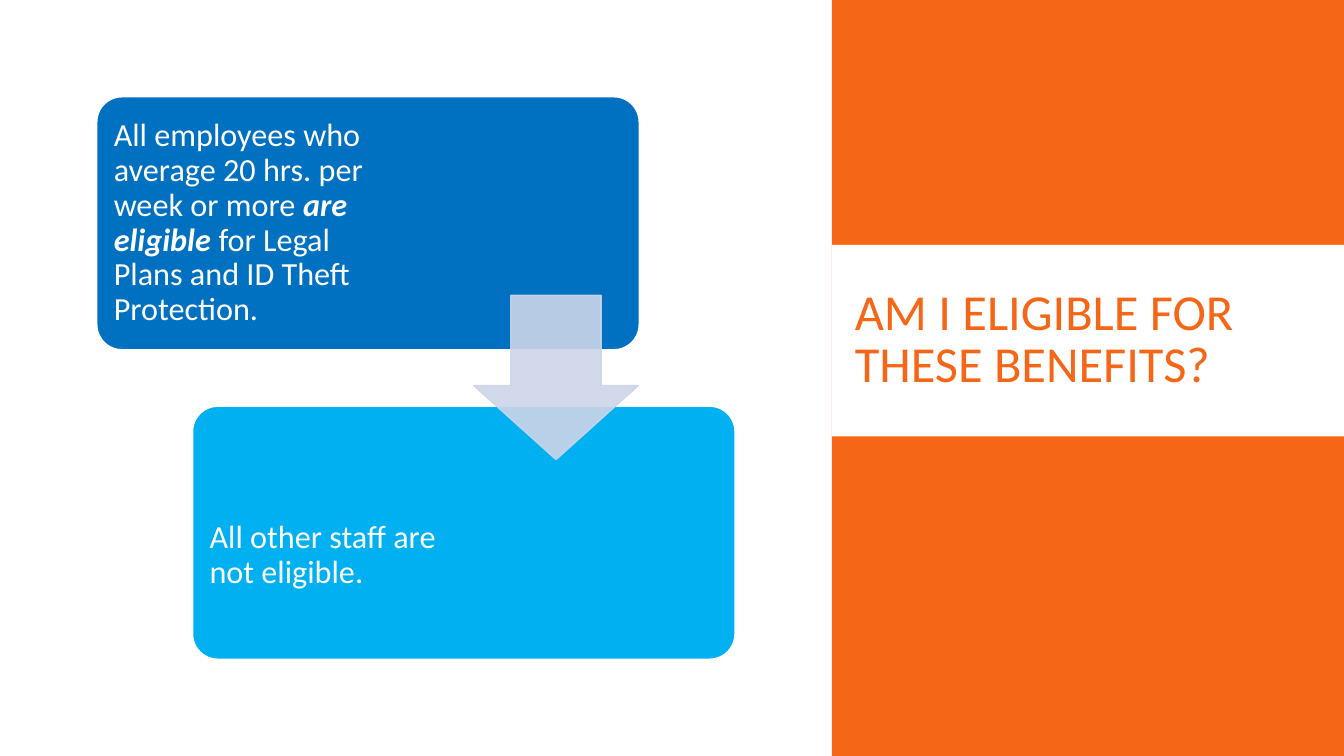
from lxml.etree import SubElement
from pptx import Presentation
from pptx.dml.color import RGBColor
from pptx.enum.shapes import MSO_SHAPE
from pptx.enum.text import MSO_ANCHOR
from pptx.oxml.ns import qn
from pptx.util import Inches, Pt

COLORS = {
    "white": "FFFFFF",
    "orange": "F56617",
    "blue": "0070C0",
    "sky": "00B0F0",
    "arrow": "CCD5E8",
}


def color(name):
    return RGBColor.from_string(COLORS[name])


def add_block(slide, kind, box, fill, line=None, adjustments=()):
    shape = slide.shapes.add_shape(kind, *map(Inches, box))
    shape.shadow.inherit = False
    shape.fill.solid()
    shape.fill.fore_color.rgb = color(fill)
    if line:
        shape.line.color.rgb = color(line)
        shape.line.width = Pt(1)
    else:
        shape.line.fill.background()
    for index, value in enumerate(adjustments):
        shape.adjustments[index] = value
    return shape


def add_text(slide, box, runs, size, font_color, spacing, margins, space_after=0):
    frame = slide.shapes.add_textbox(*map(Inches, box)).text_frame
    frame.word_wrap = True
    frame.vertical_anchor = MSO_ANCHOR.MIDDLE
    frame.margin_left = frame.margin_right = Inches(0.1)
    frame.margin_top, frame.margin_bottom = map(Inches, margins)
    paragraph = frame.paragraphs[0]
    paragraph.line_spacing = spacing
    paragraph.space_after = Pt(space_after)
    paragraph.font.size = Pt(size)
    for text, emphasized in runs:
        run = paragraph.add_run()
        run.text = text
        run.font.name = "Calibri"
        run.font.size = Pt(size)
        run.font.color.rgb = color(font_color)
        if emphasized:
            run.font.bold = run.font.italic = True


def add_card(slide, left, top, fill, text_width, runs, top_margin=0.1):
    add_block(slide, MSO_SHAPE.ROUNDED_RECTANGLE, (left, top, 5.38, 2.51),
              fill, "white", [0.1])
    add_text(slide, (left + 0.07, top + 0.07, text_width, 2.37), runs,
             23, "white", 0.9, (top_margin, 0.1), 8)


def set_opacity(shape, percent):
    for element in shape.element.spPr.iter(qn("a:srgbClr")):
        SubElement(element, qn("a:alpha"), val=str(percent * 1000))


def add_title_panel(slide):
    add_block(slide, MSO_SHAPE.RECTANGLE, (8.25, 0, 5.08, 7.5), "orange")
    add_block(slide, MSO_SHAPE.RECTANGLE, (8.25, 2.43, 5.08, 1.9), "white")
    add_text(slide, (8.38, 2.56, 4.52, 1.65),
             [("AM I ELIGIBLE FOR THESE BENEFITS?", False)],
             36, "orange", 0.85, (0.05, 0.05))


def main():
    presentation = Presentation()
    presentation.slide_width = Inches(13.33)
    presentation.slide_height = Inches(7.5)
    slide = presentation.slides.add_slide(presentation.slide_layouts[6])
    add_title_panel(slide)
    add_card(slide, 0.96, 0.96, "blue", 2.78, [
        ("All employees who average 20 hrs. per week or more ", False),
        ("are eligible ", True),
        ("for Legal Plans and ID Theft Protection.", False),
    ])
    add_card(slide, 1.91, 4.03, "sky", 2.65,
             [("All other staff are not eligible.", False)], top_margin=0.56)
    arrow = add_block(slide, MSO_SHAPE.DOWN_ARROW, (4.7, 2.93, 1.63, 1.63),
                      "arrow", "arrow", [0.55, 0.45])
    set_opacity(arrow, 90)
    presentation.save("out.pptx")


if __name__ == "__main__":
    main()
